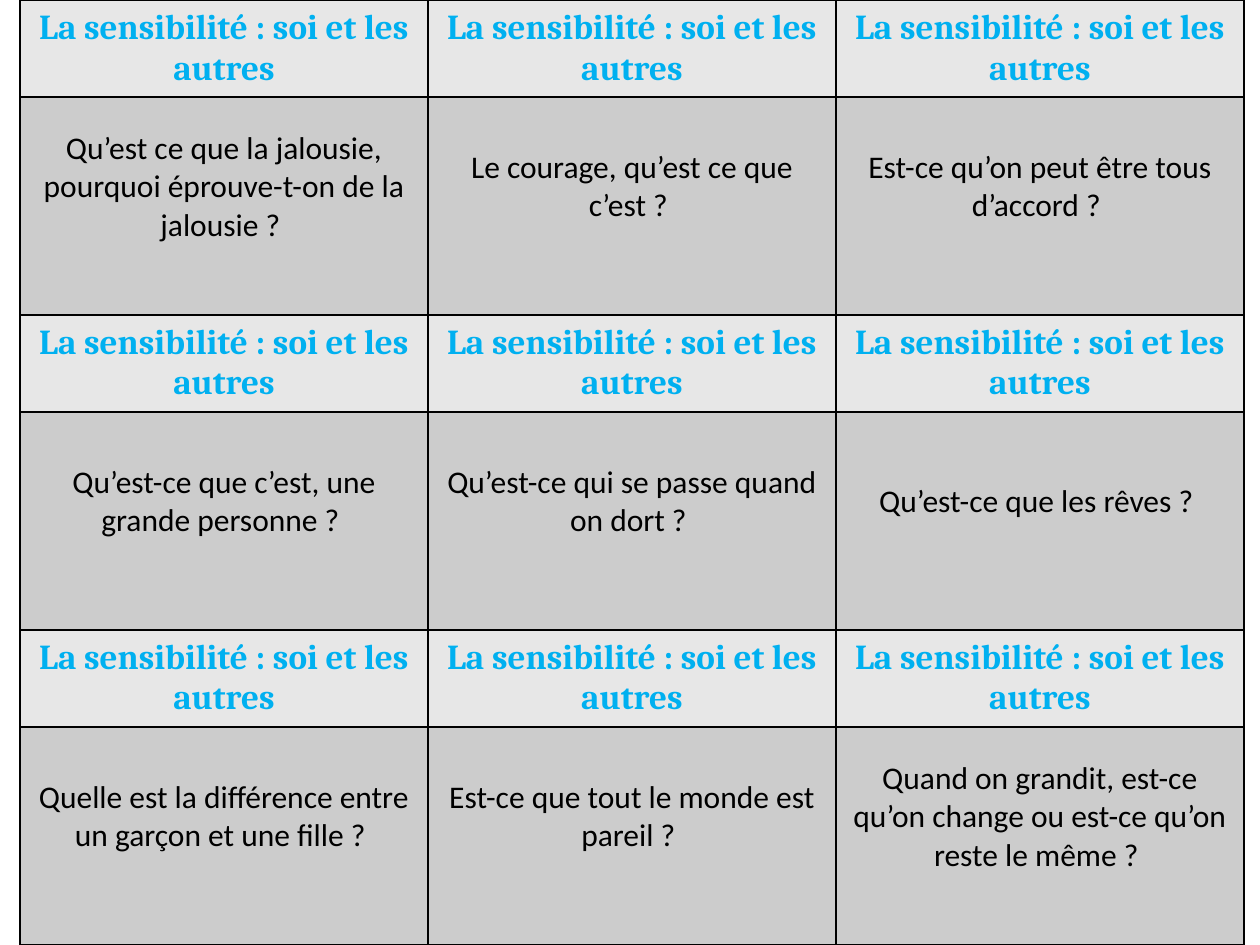
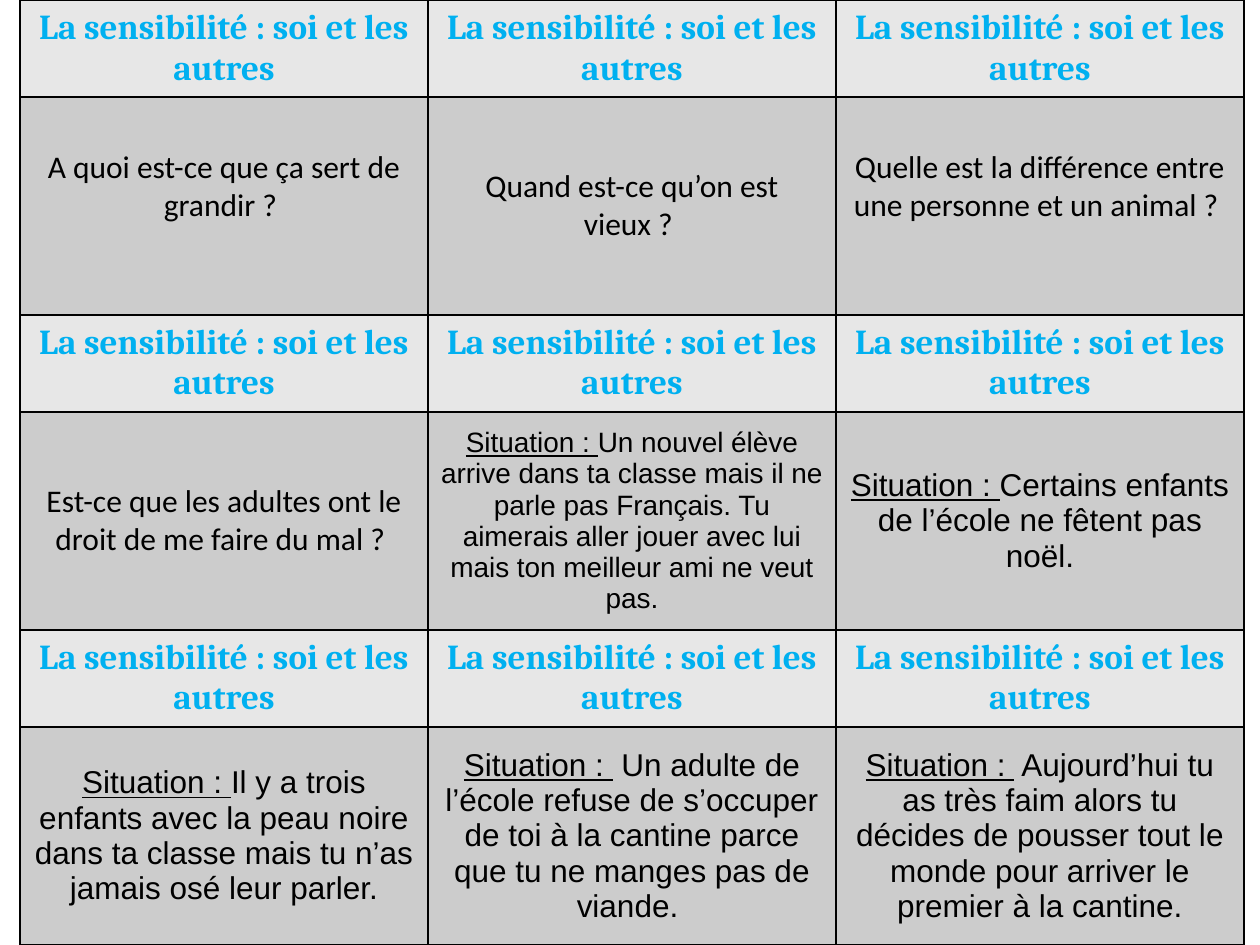
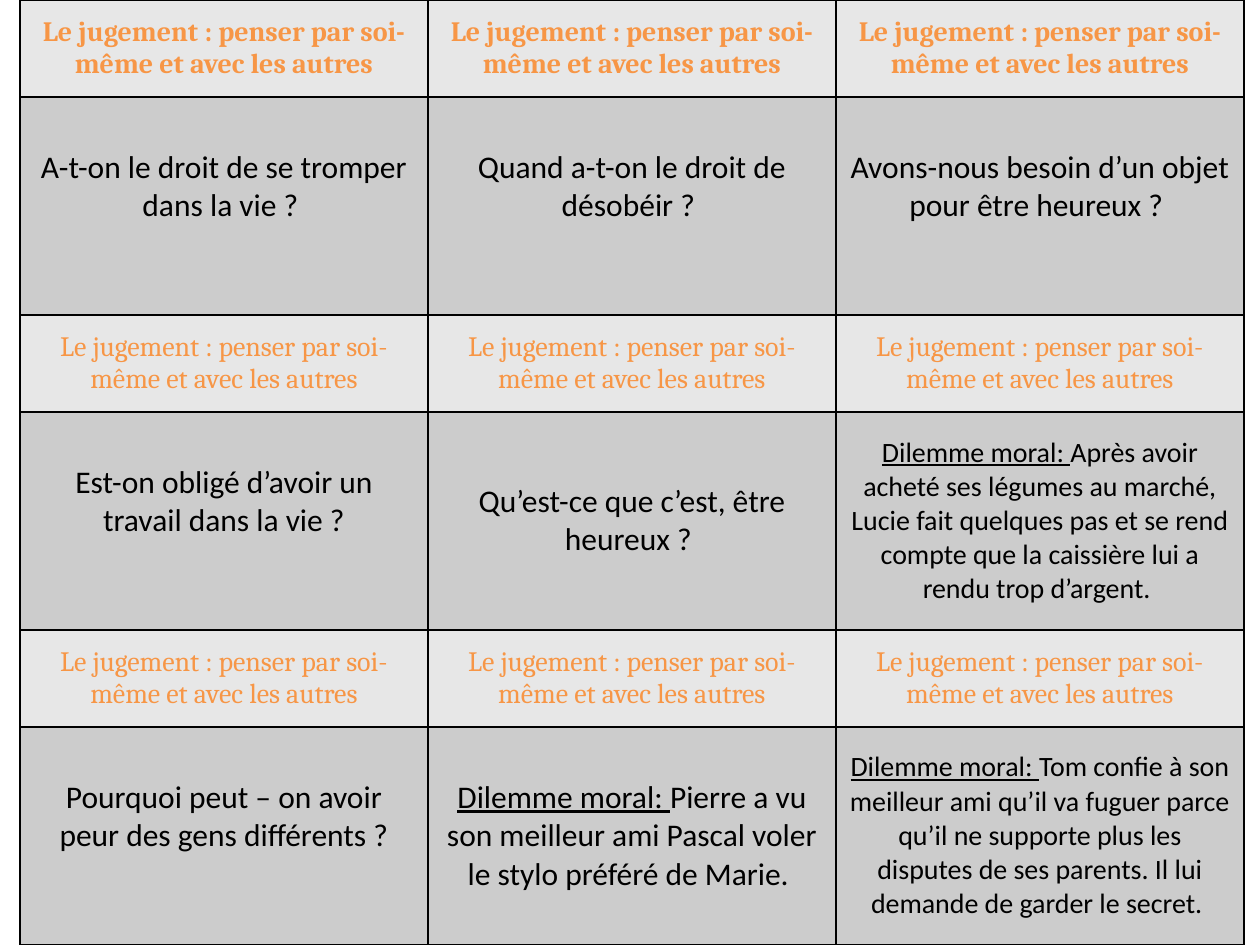
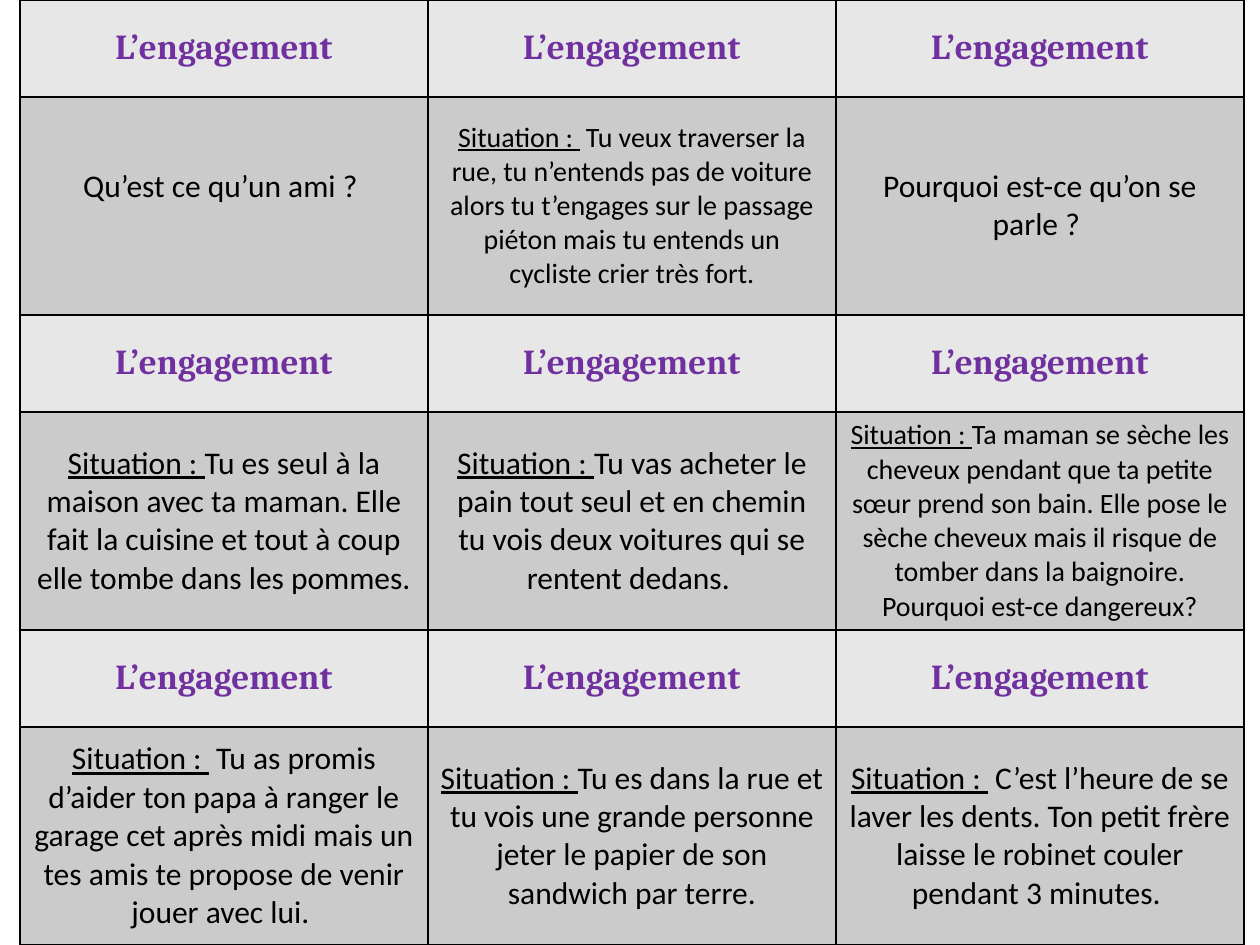
from dataclasses import dataclass

from lxml import etree
from pptx import Presentation
from pptx import util as u
from pptx.dml.color import RGBColor
from pptx.enum import text
from pptx.oxml import ns

# Shared look
PX = 914400 // 126
WIDE, HIGH = 1260, 945
LEFT, COL = 20, 408
HEAD, BODY = 97, 218
LINE = 38  # height of one text line
COLS, BANDS = 3, 3
HUES = {
    "ink": "000000",
    "head": "E7E7E7",
    "body": "CCCCCC",
    "dim": "CBCBCB",
    "blue": "00B0F0",
    "orange": "F79646",
    "purple": "7030A0",
}


@dataclass
class Card:
    words: str
    lead: str = ""
    size: int = 18
    face: str = "Calibri"
    lift: bool = False  # sits half a line above the middle


@dataclass
class Theme:
    title: str
    hue: str
    cards: list
    size: int = 20
    bold: tuple = (True, True, True)  # one flag per band
    body: str = "body"


def high(words):
    return Card(words, lift=True)


def case(words, size=18, face="Calibri"):
    return Card(words, "Situation : ", size, face)


def moral(words, size=18):
    return Card(words, "Dilemme moral: ", size)


# Cards, three per band
SELF = "La sensibilité : soi et les autres"
THEMES = [
    Theme(SELF, "blue", [
        high("Qu’est ce que la jalousie, pourquoi éprouve-t-on de la jalousie ? "),
        high("Le courage, qu’est ce que c’est ? "),
        high("Est-ce qu’on peut être tous d’accord ? "),
        high("Qu’est-ce que c’est, une grande personne ? "),
        high("Qu’est-ce qui se passe quand on dort ? "),
        high("Qu’est-ce que les rêves ? "),
        high("Quelle est la différence entre un garçon et une fille ? "),
        high("Est-ce que tout le monde est pareil ? "),
        high("Quand on grandit, est-ce qu’on change ou est-ce qu’on reste le même ? "),
    ]),
    Theme(SELF, "blue", [
        high("A quoi est-ce que ça sert de grandir ? "),
        Card("Quand est-ce qu’on est vieux ? "),
        high("Quelle est la différence entre une personne et un animal ? "),
        Card("Est-ce que les adultes ont le droit de me faire du mal ? "),
        case("Un nouvel élève arrive dans ta classe mais il ne parle pas Français. "
             "Tu aimerais aller jouer avec lui mais ton meilleur ami ne veut pas.",
             16, "Arial"),
        case("Certains enfants de l’école ne fêtent pas noël.", face="Arial"),
        case("Il y a trois enfants avec la peau noire dans ta classe mais tu n’as "
             "jamais osé leur parler.", face="Arial"),
        case(" Un adulte de l’école refuse de s’occuper de toi à la cantine parce "
             "que tu ne manges pas de viande. ", face="Arial"),
        case(" Aujourd’hui tu as très faim alors tu décides de pousser tout le "
             "monde pour arriver le premier à la cantine.", face="Arial"),
    ]),
    Theme("Le jugement : penser par soi-même et avec les autres", "orange", [
        high("A-t-on le droit de se tromper dans la vie ? "),
        high("Quand a-t-on le droit de désobéir ? "),
        high("Avons-nous besoin d’un objet pour être heureux ? "),
        high("Est-on obligé d’avoir un travail dans la vie ?"),
        Card("Qu’est-ce que c’est, être heureux ? "),
        moral("Après avoir acheté ses légumes au marché, Lucie fait quelques pas et "
              "se rend compte que la caissière lui a rendu trop d’argent. ", 16),
        high("Pourquoi peut – on avoir peur des gens différents ?"),
        moral("Pierre a vu son meilleur ami Pascal voler le stylo préféré de Marie. "),
        moral("Tom confie à son meilleur ami qu’il va fuguer parce qu’il ne supporte "
              "plus les disputes de ses parents. Il lui demande de garder le secret. ",
              16),
    ], size=16, bold=(True, False, False)),
    Theme("L’engagement", "purple", [
        high("Qu’est ce qu’un ami ? "),
        case(" Tu veux traverser la rue, tu n’entends pas de voiture alors tu "
             "t’engages sur le passage piéton mais tu entends un cycliste crier "
             "très fort.", 16),
        Card("Pourquoi est-ce qu’on se parle ? "),
        case("Tu es seul à la maison avec ta maman. Elle fait la cuisine et tout à "
             "coup elle tombe dans les pommes."),
        case("Tu vas acheter le pain tout seul et en chemin tu vois deux voitures "
             "qui se rentent dedans. "),
        case("Ta maman se sèche les cheveux pendant que ta petite sœur prend son "
             "bain. Elle pose le sèche cheveux mais il risque de tomber dans la "
             "baignoire. Pourquoi est-ce dangereux?", 16),
        case(" Tu as promis d’aider ton papa à ranger le garage cet après midi mais "
             "un tes amis te propose de venir jouer avec lui. "),
        case("Tu es dans la rue et tu vois une grande personne jeter le papier de "
             "son sandwich par terre."),
        case(" C’est l’heure de se laver les dents. Ton petit frère laisse le "
             "robinet couler pendant 3 minutes. "),
    ], body="dim"),
]


def tint(name):
    return RGBColor.from_string(HUES[name])


def frame(cell):
    """Draw a thin line on all four sides of a cell."""
    props = cell._tc.get_or_add_tcPr()
    for side in ("lnL", "lnR", "lnT", "lnB"):
        line = etree.SubElement(props, ns.qn("a:" + side), w=str(u.Pt(1)))
        fill = etree.SubElement(line, ns.qn("a:solidFill"))
        etree.SubElement(fill, ns.qn("a:srgbClr"), val=HUES["ink"])


def style(run, face, size, hue, bold=False, under=False):
    font = run.font
    font.name, font.size = face, u.Pt(size)
    font.bold, font.underline = bold, under
    font.color.rgb = tint(hue)


def base(cell, fill, words):
    """Prepare a cell and return its centred paragraph."""
    frame(cell)
    cell.fill.solid()
    cell.fill.fore_color.rgb = tint(fill)
    cell.vertical_anchor = text.MSO_ANCHOR.MIDDLE
    para = cell.text_frame.paragraphs[0]
    para.text = words
    para.alignment = text.PP_ALIGN.CENTER
    return para


def title(cell, theme, bold):
    para = base(cell, "head", theme.title)
    style(para.runs[0], "Cambria", theme.size, theme.hue, bold)


def body(cell, card, fill):
    para = base(cell, fill, card.lead or card.words)
    if card.lead:
        para.add_run().text = card.words
    for num, run in enumerate(para.runs):
        under = bool(card.lead) and num == 0
        style(run, card.face, card.size, "ink", under=under)
    if card.lift:
        cell.margin_bottom += LINE * PX


def sheet(deck, theme):
    """Add one slide of cards: a title row above each row of questions."""
    slide = deck.slides.add_slide(deck.slide_layouts[6])
    grid = slide.shapes.add_table(
        2 * BANDS, COLS, LEFT * PX, 0, COLS * COL * PX, HIGH * PX).table
    grid.first_row = grid.horz_banding = False
    for col in grid.columns:
        col.width = COL * PX
    for num, row in enumerate(grid.rows):
        row.height = (BODY if num % 2 else HEAD) * PX
    for num, card in enumerate(theme.cards):
        band, col = divmod(num, COLS)
        title(grid.cell(2 * band, col), theme, theme.bold[band])
        body(grid.cell(2 * band + 1, col), card, theme.body)


def main():
    deck = Presentation()
    deck.slide_width, deck.slide_height = u.Inches(10), u.Inches(7.5)
    for theme in THEMES:
        sheet(deck, theme)
    deck.save("out.pptx")


if __name__ == "__main__":
    main()
